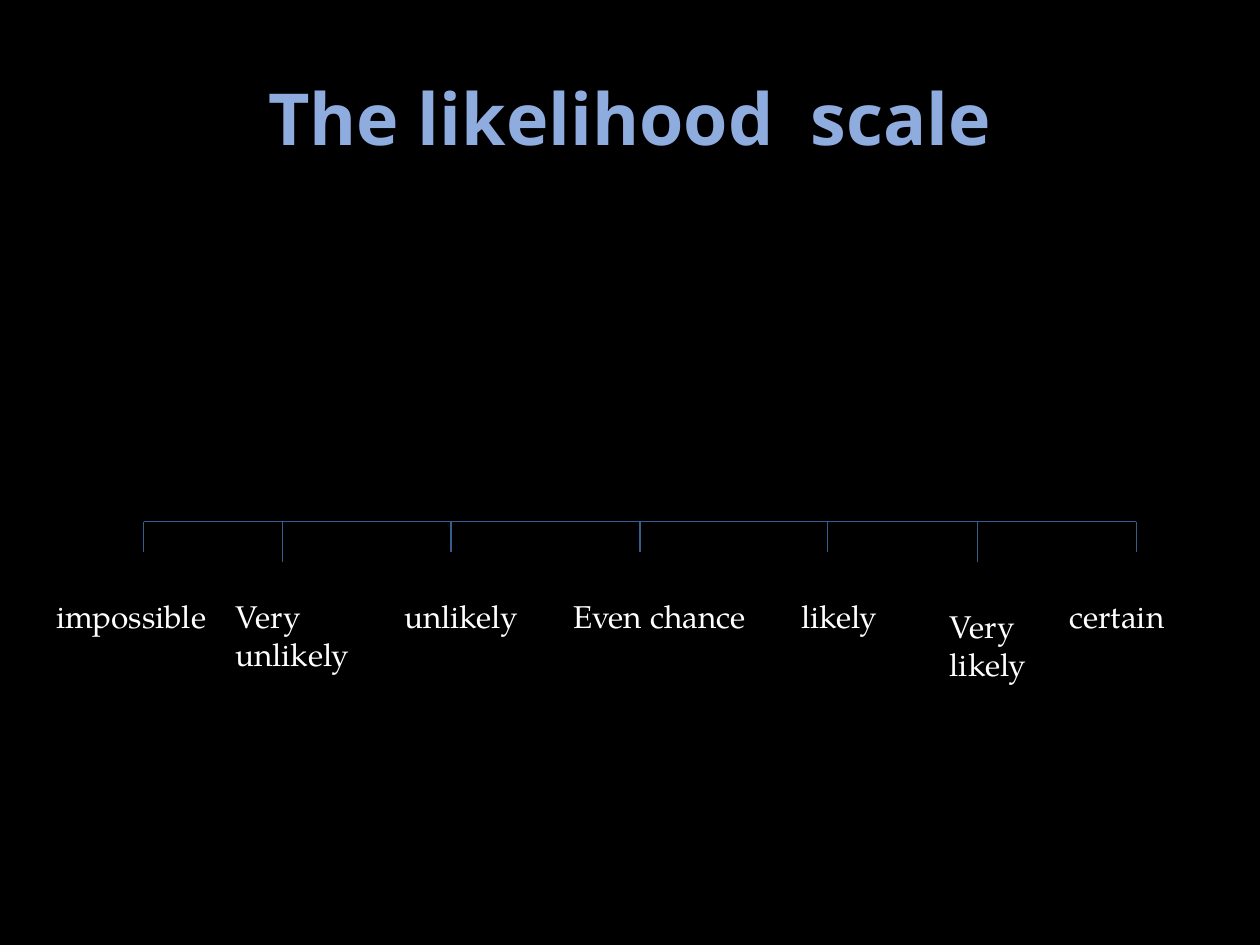
from lxml.etree import SubElement
from pptx import Presentation
from pptx.dml.color import RGBColor
from pptx.enum.shapes import MSO_CONNECTOR as Link
from pptx.enum.text import MSO_ANCHOR as Anchor, PP_ALIGN as Align
from pptx.oxml.ns import qn
from pptx.util import Inches, Pt

BLACK = RGBColor(0x00, 0x00, 0x00)
WHITE = RGBColor(0xFF, 0xFF, 0xFF)
SKY = RGBColor(0x8F, 0xAC, 0xDE)
BLUE = RGBColor(0x35, 0x5D, 0x8D)

MARKS = [
    ("impossible", 1.14, 0.24, 0.35, 4.69, 1.89),
    ("Very\nunlikely", 2.24, 0.32, 1.77, 4.69, 1.26),
    ("unlikely", 3.58, 0.24, 3.11, 4.69, 1.34),
    ("Even chance", 5.08, 0.24, 4.45, 4.69, 1.57),
    ("likely", 6.57, 0.24, 6.26, 4.69, 1.1),
    ("Very\nlikely", 7.76, 0.32, 7.44, 4.77, 1.18),
    ("certain", 9.02, 0.24, 8.39, 4.69, 1.3),
]


def add_text(slide, box, text, font, size, color, bold=False,
             align=Align.LEFT, anchor=Anchor.TOP):
    frame = slide.shapes.add_textbox(*map(Inches, box)).text_frame
    frame.word_wrap = True
    frame.vertical_anchor = anchor
    frame.text = text
    for para in frame.paragraphs:
        para.alignment = align
        para.font.name = font
        para.font.size = Pt(size)
        para.font.bold = bold
        para.font.color.rgb = color


def add_line(slide, *ends):
    line = slide.shapes.add_connector(Link.STRAIGHT, *map(Inches, ends))
    line.line.color.rgb = BLUE
    line.line.width = Pt(0.75)
    SubElement(line._element.spPr, qn("a:effectLst"))


def add_title(slide, box):
    add_text(slide, box, "The likelihood  scale", "Noto Sans", 41, SKY,
             True, Align.CENTER, Anchor.MIDDLE)


def add_scale(slide, box):
    left, top, width, height = box
    add_line(slide, left, top, left + width, top)
    for label, x, drop, side, y, span in MARKS:
        add_line(slide, x, top, x, top + drop)
        tall = 0.71 if "\n" in label else 0.4
        add_text(slide, (side, y, span, tall), label,
                 "TeX Gyre Pagella", 18, WHITE)


def main():
    deck = Presentation()
    deck.slide_width, deck.slide_height = Inches(10), Inches(7.5)
    slide = deck.slides.add_slide(deck.slide_layouts[6])
    fill = slide.background.fill
    fill.solid()
    fill.fore_color.rgb = BLACK
    add_title(slide, (0.5, 0.3, 9, 1.25))
    add_scale(slide, (1.14, 4.14, 7.88, 1.34))
    deck.save("out.pptx")


if __name__ == "__main__":
    main()
